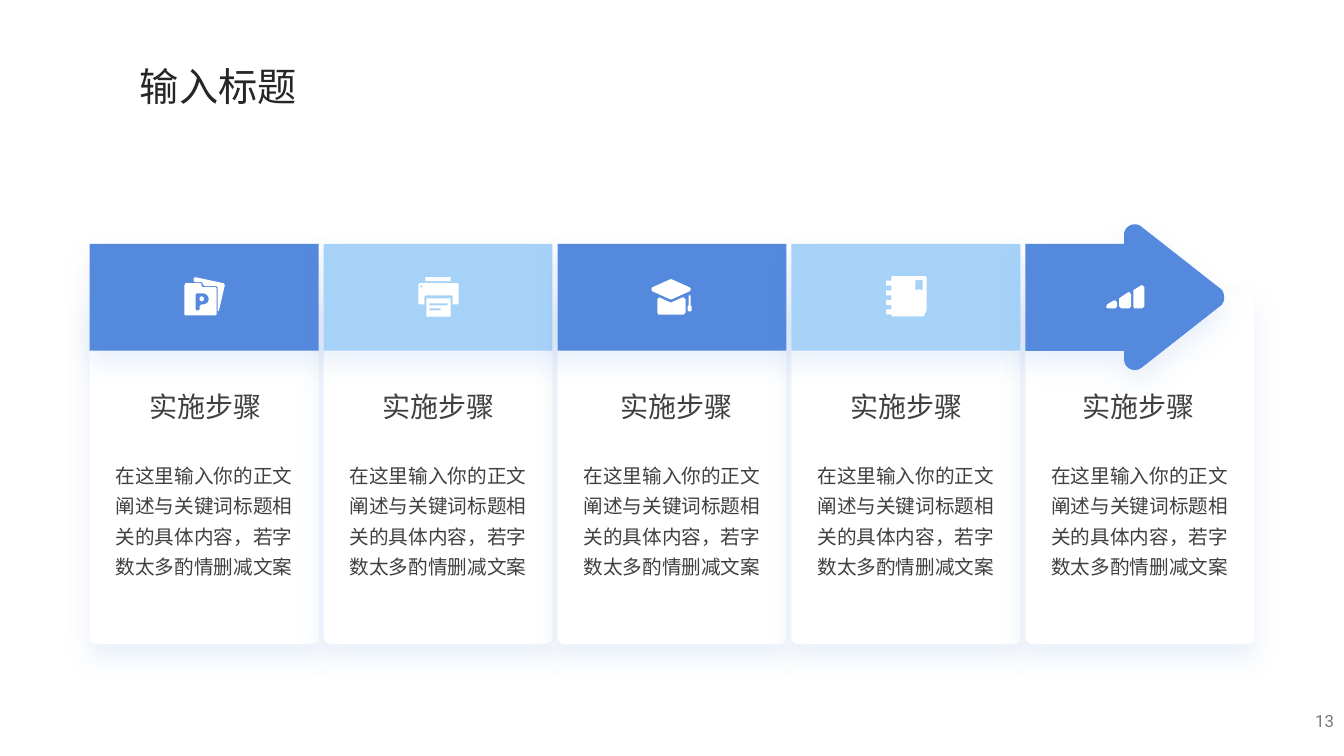
"""Build a five-step process slide with headed cards and an arrow."""
from dataclasses import dataclass

from lxml.etree import SubElement
from pptx import Presentation
from pptx.dml.color import RGBColor
from pptx.enum.shapes import MSO_SHAPE
from pptx.enum.text import MSO_ANCHOR, MSO_AUTO_SIZE, PP_ALIGN
from pptx.oxml.ns import qn
from pptx.util import Inches, Pt

BLUE, SKY, WHITE = "5489DD", "A7D2F8", "FFFFFF"
TITLE_COLOR, TEXT_COLOR, NUMBER_COLOR = "262626", "404040", "797979"
CJK, ROBOTO = "Noto Sans CJK SC", "Roboto"
CARD_LEFT, CARD_PITCH, CARD_WIDTH = 0.89, 2.32, 2.27
CARD_TOP, CARD_HEIGHT = 2.91, 3.48
BAND_TOP, BAND_HEIGHT = 2.42, 1.06
HEADING = "实施步骤"
BODY = "在这里输入你的正文阐述与关键词标题相关的具体内容，若字数太多酌情删减文案"

Contour = list[tuple[float, ...]]


@dataclass
class Step:
    """One card: its band colour, heading position and icon in 1/100 inch."""
    band_color: str
    heading_left: float
    icon_left: float
    icon_top: float
    icon: list[Contour]


@dataclass
class Label:
    """One text box with its place and style."""
    text: str
    left: float
    top: float
    width: float
    height: float
    size: float
    color: str
    font: str = CJK
    align: PP_ALIGN = PP_ALIGN.CENTER
    anchor: MSO_ANCHOR = MSO_ANCHOR.TOP
    margins: tuple[float, float] = (0, 0)
    spacing: float | None = None
    wrap: bool = True
    grow: bool = True


def box(left: float, top: float, right: float, bottom: float) -> Contour:
    """Return the four corners of a box."""
    return [(left, top), (right, top), (right, bottom), (left, bottom)]


FOLDER = [
    [(11, 0), (39, 6), (40, 8), (34, 34), (33, 33), (33, 10), (32, 9), (20, 9),
     (19, 8), (18, 6), (17, 5), (10, 5), (9, 3), (9, 1)],
    [(1, 6), (16, 6), (17, 7), (17, 9), (19, 10), (31, 10), (32, 11), (32, 37),
     (31, 38), (1, 38), (0, 37), (0, 8)],
    [(12, 16), (11, 17), (11, 32), (12, 33), (14, 33), (15, 32), (15, 29),
     (17, 27), (18, 27), (20, 27, 24, 26, 24, 22), (24, 18, 21, 16, 18, 16)],
    [(17, 19), (20, 19, 20, 24, 17, 24), (15, 23), (15, 20)],
]
PRINTER = [
    box(7, 0, 32, 4), box(8, 21, 32, 39), box(11, 26, 29, 28),
    box(11, 31, 22, 33), box(2, 8, 4, 10),
    [(1, 6), (39, 6), (40, 7), (40, 26), (39, 27), (34, 27), (34, 19), (33, 18),
     (7, 18), (6, 19), (6, 27), (1, 27), (0, 26), (0, 7)],
]
GRADUATION_CAP = [
    [(32, 18), (34, 20), (34, 33), (32, 35), (7, 35), (6, 33), (6, 20), (8, 18),
     (19, 23), (20, 23), (31, 18)],
    [(37, 16), (39, 16), (39, 26), (40, 27), (40, 31), (39, 32), (37, 32),
     (36, 31), (36, 27), (37, 26)],
    [(19, 0), (20, 0), (38, 8), (39, 9), (39, 11), (38, 12), (20, 20), (19, 20),
     (1, 12), (0, 10), (1, 8)],
]
NOTEBOOK = [
    [(6, 0), (39, 0), (40, 1), (40, 34), (37, 40), (6, 40), (5, 39), (5, 1)],
    [(29, 4), (36, 4), (36, 14), (32.5, 13), (29, 14)],
    *[box(0, 4.5 + 9.5 * tab, 5, 9.5 + 9.5 * tab) for tab in range(4)],
]
RISING_BARS = [
    [(9, 15), (11, 17), (11, 21), (9, 23), (2, 23), (0, 22), (1, 19), (8, 15)],
    [(23, 7), (25, 9), (25, 21), (23, 23), (15, 23), (13, 21), (13, 13), (22, 7)],
    [(36, 0), (38, 2), (38, 21), (36, 23), (28, 23), (27, 21), (27, 5), (35, 0)],
]
ARROW = [[
    (98, 10), (98, 20), (0, 20), (0, 126), (98, 126), (98, 135),
    (98, 139, 101, 143, 104, 144), (108, 146, 112, 145, 115, 143), (194, 81),
    (196, 79, 198, 75, 197, 72), (197, 69, 196, 66, 193, 64), (114, 2),
    (111, 0, 106, 0, 103, 2), (100, 4, 98, 7, 98, 10),
]]
STEPS = [
    Step(BLUE, 1, 1.83, 2.75, FOLDER),
    Step(SKY, 3.31, 4.15, 2.75, PRINTER),
    Step(BLUE, 5.67, 6.46, 2.77, GRADUATION_CAP),
    Step(SKY, 7.95, 8.79, 2.74, NOTEBOOK),
    Step(BLUE, 10.25, 10.97, 2.83, RISING_BARS),
]


def paint(shape, color: str, shadow: bool = False) -> None:
    """Fill a shape without outline, optionally with a soft blue shadow."""
    shape.fill.solid()
    shape.fill.fore_color.rgb = RGBColor.from_string(color)
    shape.line.fill.background()
    shape.shadow.inherit = False
    if shadow:
        effects = shape.element.spPr.find(qn("a:effectLst"))
        outer = SubElement(effects, qn("a:outerShdw"), blurRad=str(Pt(19)),
                           dist=str(Pt(9)), dir="5400000", rotWithShape="0")
        tint = SubElement(outer, qn("a:srgbClr"), val=BLUE)
        SubElement(tint, qn("a:alpha"), val="12000")


def flatten(contour: Contour) -> Contour:
    """Replace each cubic curve of a contour by short straight segments."""
    points = []
    for part in contour:
        if len(part) == 2:
            points.append(part)
            continue
        knots = [points[-1], part[:2], part[2:4], part[4:]]
        for step in range(1, 9):
            t = step / 8
            weights = ((1 - t) ** 3, 3 * t * (1 - t) ** 2, 3 * t * t * (1 - t), t ** 3)
            points.append(tuple(sum(w * knot[axis] for w, knot in zip(weights, knots))
                                for axis in (0, 1)))
    return points


def draw_outline(slide, contours: list[Contour], left: float, top: float,
                 color: str, shadow: bool = False) -> None:
    """Draw contours given in 1/100 inch from a corner as one freeform."""
    builder = None
    for contour in contours:
        points = [(Inches(left + x / 100), Inches(top + y / 100))
                  for x, y in flatten(contour)]
        if builder is None:
            builder = slide.shapes.build_freeform(*points[0])
        else:
            builder.move_to(*points[0])
        builder.add_line_segments(points[1:], close=True)
    paint(builder.convert_to_shape(), color, shadow)


def draw_preset(slide, preset: MSO_SHAPE, left: float, top: float,
                height: float, color: str):
    """Draw a card-wide preset shape with the card shadow."""
    shape = slide.shapes.add_shape(preset, Inches(left), Inches(top),
                                   Inches(CARD_WIDTH), Inches(height))
    paint(shape, color, shadow=True)
    return shape


def draw_label(slide, label: Label) -> None:
    """Draw a text box."""
    frame = slide.shapes.add_textbox(Inches(label.left), Inches(label.top),
                                     Inches(label.width), Inches(label.height)).text_frame
    frame.text = label.text
    frame.word_wrap = label.wrap
    frame.auto_size = MSO_AUTO_SIZE.SHAPE_TO_FIT_TEXT if label.grow else MSO_AUTO_SIZE.NONE
    frame.vertical_anchor = label.anchor
    frame.margin_left = frame.margin_right = Inches(label.margins[0])
    frame.margin_top = frame.margin_bottom = Inches(label.margins[1])
    paragraph = frame.paragraphs[0]
    paragraph.alignment = label.align
    paragraph.line_spacing = label.spacing
    font = paragraph.runs[0].font
    font.size = Pt(label.size)
    font.name = label.font
    font.color.rgb = RGBColor.from_string(label.color)
    SubElement(paragraph.runs[0]._r.get_or_add_rPr(), qn("a:ea"), typeface=label.font)


def main() -> None:
    """Build and save the slide."""
    deck = Presentation()
    deck.slide_width, deck.slide_height = Inches(13.33), Inches(7.5)
    slide = deck.slides.add_slide(deck.slide_layouts[6])
    lefts = [CARD_LEFT + CARD_PITCH * column for column in range(len(STEPS))]
    for left in lefts:
        card = draw_preset(slide, MSO_SHAPE.ROUNDED_RECTANGLE, left, CARD_TOP, CARD_HEIGHT, WHITE)
        card.adjustments[0] = 0.03
    for left, step in zip(lefts[:-1], STEPS):
        draw_preset(slide, MSO_SHAPE.RECTANGLE, left, BAND_TOP, BAND_HEIGHT, step.band_color)
    draw_outline(slide, ARROW, lefts[-1], 2.22, STEPS[-1].band_color, shadow=True)
    for left, step in zip(lefts, STEPS):
        draw_outline(slide, step.icon, step.icon_left, step.icon_top, WHITE)
        draw_label(slide, Label(HEADING, step.heading_left, 3.84, 2.08, 0.39, 20, TEXT_COLOR,
                                anchor=MSO_ANCHOR.MIDDLE, margins=(0.03, 0.03)))
        draw_label(slide, Label(BODY, left + 0.17, 4.53, 1.93, 1.23, 14, TEXT_COLOR, spacing=1.3))
    draw_label(slide, Label("13", 10.33, 6.95, 3, 0.4, 12, NUMBER_COLOR, ROBOTO, PP_ALIGN.RIGHT,
                            MSO_ANCHOR.MIDDLE, (0.1, 0.05), grow=False))
    draw_label(slide, Label("输入标题", 1.29, 0.57, 1.77, 0.57, 28, TITLE_COLOR,
                            align=PP_ALIGN.LEFT, margins=(0.1, 0.05), wrap=False))
    deck.save("out.pptx")


if __name__ == "__main__":
    main()
